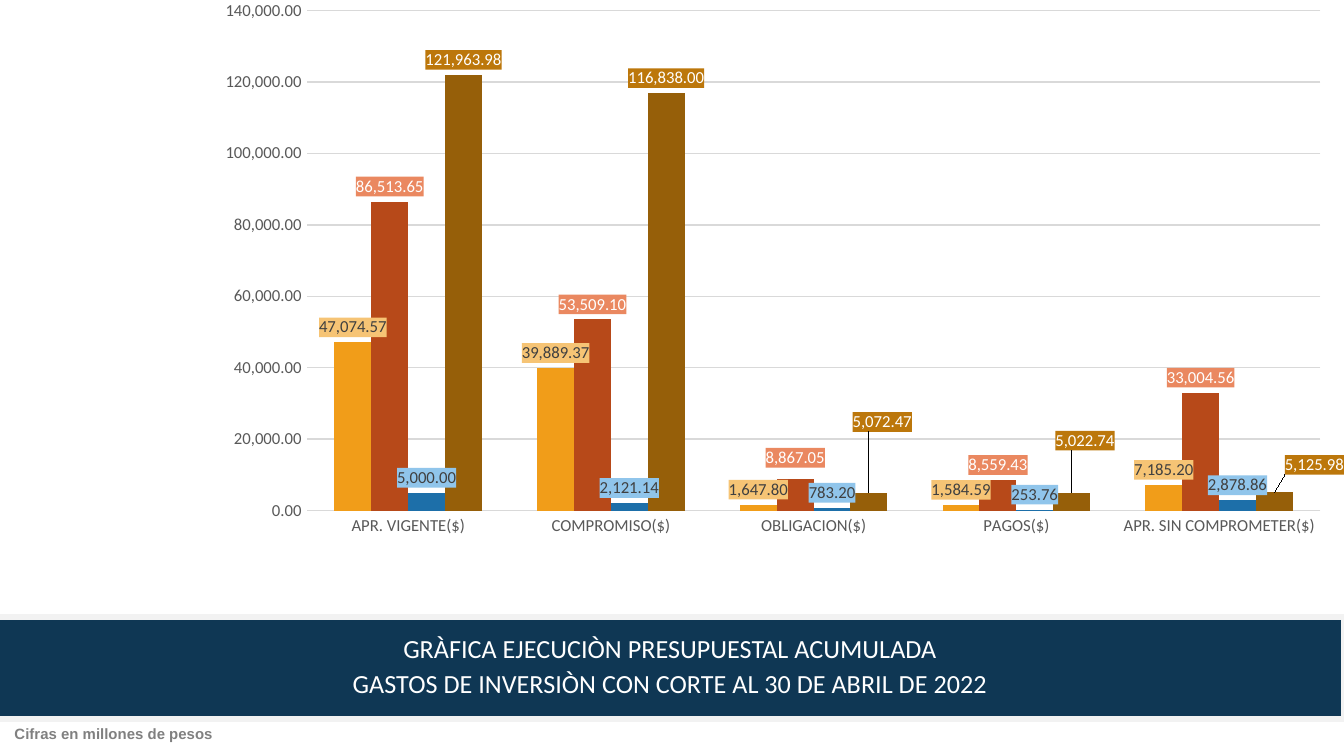
from copy import deepcopy

from lxml import etree
from pptx import Presentation
from pptx.chart.data import CategoryChartData
from pptx.dml.color import RGBColor
from pptx.enum.chart import XL_CHART_TYPE, XL_LABEL_POSITION, XL_TICK_MARK
from pptx.enum.text import MSO_ANCHOR, MSO_AUTO_SIZE, PP_ALIGN
from pptx.oxml.ns import qn
from pptx.util import Pt

COLUMNS = XL_CHART_TYPE.COLUMN_CLUSTERED
ABOVE_BAR = XL_LABEL_POSITION.OUTSIDE_END
NO_TICK = XL_TICK_MARK.NONE
MIDDLE = MSO_ANCHOR.MIDDLE
NO_FIT = MSO_AUTO_SIZE.NONE
LEFT, CENTER = PP_ALIGN.LEFT, PP_ALIGN.CENTER

NAVY = RGBColor(0x0F, 0x37, 0x54)
WHITE = RGBColor(0xFF, 0xFF, 0xFF)
PALE_GRAY = RGBColor(0xF2, 0xF2, 0xF2)
GRID_GRAY = RGBColor(0xD9, 0xD9, 0xD9)
NOTE_GRAY = RGBColor(0x80, 0x80, 0x80)
AXIS_GRAY = RGBColor(0x59, 0x59, 0x59)
DARK_GRAY = RGBColor(0x40, 0x40, 0x40)
AMBER = RGBColor(0xF1, 0x9D, 0x19)
LIGHT_AMBER = RGBColor(0xF6, 0xC4, 0x75)
RUST = RGBColor(0xB7, 0x49, 0x19)
LIGHT_RUST = RGBColor(0xEA, 0x88, 0x60)
BLUE = RGBColor(0x1D, 0x6F, 0xA9)
LIGHT_BLUE = RGBColor(0x90, 0xC5, 0xEB)
BROWN = RGBColor(0x96, 0x5F, 0x09)
LIGHT_BROWN = RGBColor(0xBC, 0x77, 0x0B)

NUMBER_FORMAT = "#,##0.00"
CATEGORIES = ["APR. VIGENTE($)", "COMPROMISO($)", "OBLIGACION($)", "PAGOS($)",
              "APR. SIN COMPROMETER($)"]
# values, bar colour, label fill, label text, {category index: label shift as chart fraction}
SERIES = [
    ([47074.57, 39889.37, 1647.8, 1584.59, 7185.2],
     AMBER, LIGHT_AMBER, DARK_GRAY, {3: (0, 0)}),
    ([86513.65, 53509.1, 8867.05, 8559.43, 33004.56],
     RUST, LIGHT_RUST, WHITE, {2: (0, -0.01)}),
    ([5000, 2121.14, 783.2, 253.76, 2878.86],
     BLUE, LIGHT_BLUE, DARK_GRAY, {}),
    ([121963.98, 116838, 5072.47, 5022.74, 5125.98],
     BROWN, LIGHT_BROWN, WHITE, {2: (0.01, -0.09), 3: (0.01, -0.06), 4: (0.03, -0.02)}),
]


def write(frame, lines, *, font, size, color, bold=False, align=LEFT, before=0):
    frame.word_wrap = True
    for number, line in enumerate(lines):
        paragraph = frame.add_paragraph() if number else frame.paragraphs[0]
        paragraph.alignment = align
        paragraph.line_spacing = 0.9
        paragraph.space_before = Pt(before)
        run = paragraph.add_run()
        run.text = line
        run.font.name = font
        run.font.size = Pt(size)
        run.font.bold = bold
        run.font.color.rgb = color


def manual_layout(**settings):
    layout = etree.Element(qn("c:layout"))
    manual = etree.SubElement(layout, qn("c:manualLayout"))
    for name, value in settings.items():
        etree.SubElement(manual, qn(f"c:{name}")).set("val", str(value))
    return layout


prs = Presentation()
prs.slide_width, prs.slide_height = Pt(720), Pt(405)
slide = prs.slides.add_slide(prs.slide_layouts[5])

# Title banner
banner = slide.shapes.title
banner.left, banner.top, banner.width, banner.height = Pt(-2), Pt(330.5), Pt(722), Pt(54.7)
banner.fill.solid()
banner.fill.fore_color.rgb = NAVY
banner.line.color.rgb = PALE_GRAY
banner.line.width = Pt(3)
frame = banner.text_frame
frame.auto_size = NO_FIT
frame.vertical_anchor = MIDDLE
frame.margin_left = frame.margin_right = frame.margin_top = frame.margin_bottom = 0
write(frame, ["GRÀFICA EJECUCIÒN PRESUPUESTAL ACUMULADA",
              "GASTOS DE INVERSIÒN CON CORTE AL 30 DE ABRIL DE 2022"],
      font="Calibri", size=14, color=WHITE, align=CENTER, before=3.6)

# Units note
units_note = slide.shapes.add_textbox(Pt(0.7), Pt(386), Pt(144), Pt(16))
write(units_note.text_frame, ["Cifras en millones de pesos"],
      font="Arial", size=8, color=NOTE_GRAY, bold=True, before=8)

# Budget chart
budget = CategoryChartData(number_format=NUMBER_FORMAT)
budget.categories = CATEGORIES
for number, (values, *_) in enumerate(SERIES, 1):
    budget.add_series(f"Series {number}", values)
chart = slide.shapes.add_chart(COLUMNS, 0, 0, Pt(720), Pt(330.5), budget).chart
chart.has_legend = False
chart.has_title = False
chart.font.name = "Calibri"
chart.font.size = Pt(10)

for axis in (chart.category_axis, chart.value_axis):
    axis.major_tick_mark = axis.minor_tick_mark = NO_TICK
    axis.format.line.fill.background()
    axis.tick_labels.font.name = "Calibri"
    axis.tick_labels.font.size = Pt(9)
    axis.tick_labels.font.color.rgb = AXIS_GRAY
amounts = chart.value_axis
amounts.minimum_scale, amounts.maximum_scale, amounts.major_unit = 0, 140000, 20000
amounts.tick_labels.number_format = NUMBER_FORMAT
amounts.tick_labels.number_format_is_linked = False
amounts.major_gridlines.format.line.color.rgb = GRID_GRAY
amounts.major_gridlines.format.line.width = Pt(0.75)

plot = chart.plots[0]
plot.gap_width = 150
plot.overlap = 0
plot.vary_by_categories = False
plot_area = chart._chartSpace.chart.plotArea
for old_layout in plot_area.findall(qn("c:layout")):
    plot_area.remove(old_layout)
plot_area.insert(0, manual_layout(layoutTarget="inner", xMode="edge", yMode="edge",
                                  x=0.23, y=0.017, w=0.76, h=0.811))

for series, (_, bar_color, label_fill, label_color, shifts) in zip(plot.series, SERIES):
    series.format.fill.solid()
    series.format.fill.fore_color.rgb = bar_color
    labels = series.data_labels
    labels.show_value = True
    labels.position = ABOVE_BAR
    labels.number_format = NUMBER_FORMAT
    labels.number_format_is_linked = False
    labels.font.name = "Calibri"
    labels.font.size = Pt(9)
    labels.font.color.rgb = label_color
    box = etree.Element(qn("c:spPr"))
    fill = etree.SubElement(box, qn("a:solidFill"))
    etree.SubElement(fill, qn("a:srgbClr")).set("val", str(label_fill))
    labels_xml = labels._element
    labels_xml.find(qn("c:numFmt")).addnext(box)
    shared_format = [labels_xml.find(qn(tag)) for tag in ("c:numFmt", "c:spPr", "c:txPr")]

    for index, (dx, dy) in shifts.items():
        series.points[index].data_label.position = ABOVE_BAR
        label_xml = next(label for label in labels_xml.findall(qn("c:dLbl"))
                         if label.find(qn("c:idx")).get("val") == str(index))
        for tag in ("c:spPr", "c:txPr"):
            for default in label_xml.findall(qn(tag)):
                label_xml.remove(default)
        parts = [manual_layout(x=dx, y=dy)] + [deepcopy(part) for part in shared_format]
        for place, part in enumerate(parts, 1):
            label_xml.insert(place, part)

prs.save("out.pptx")
